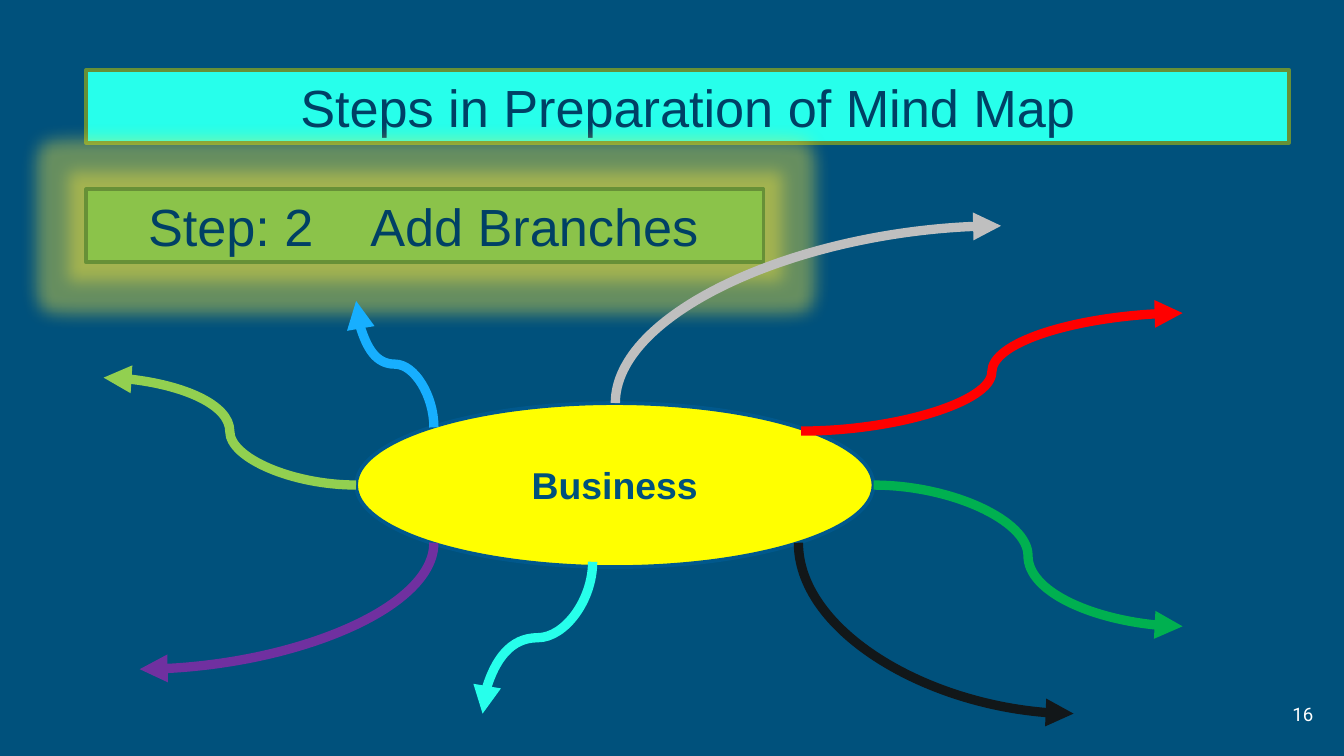
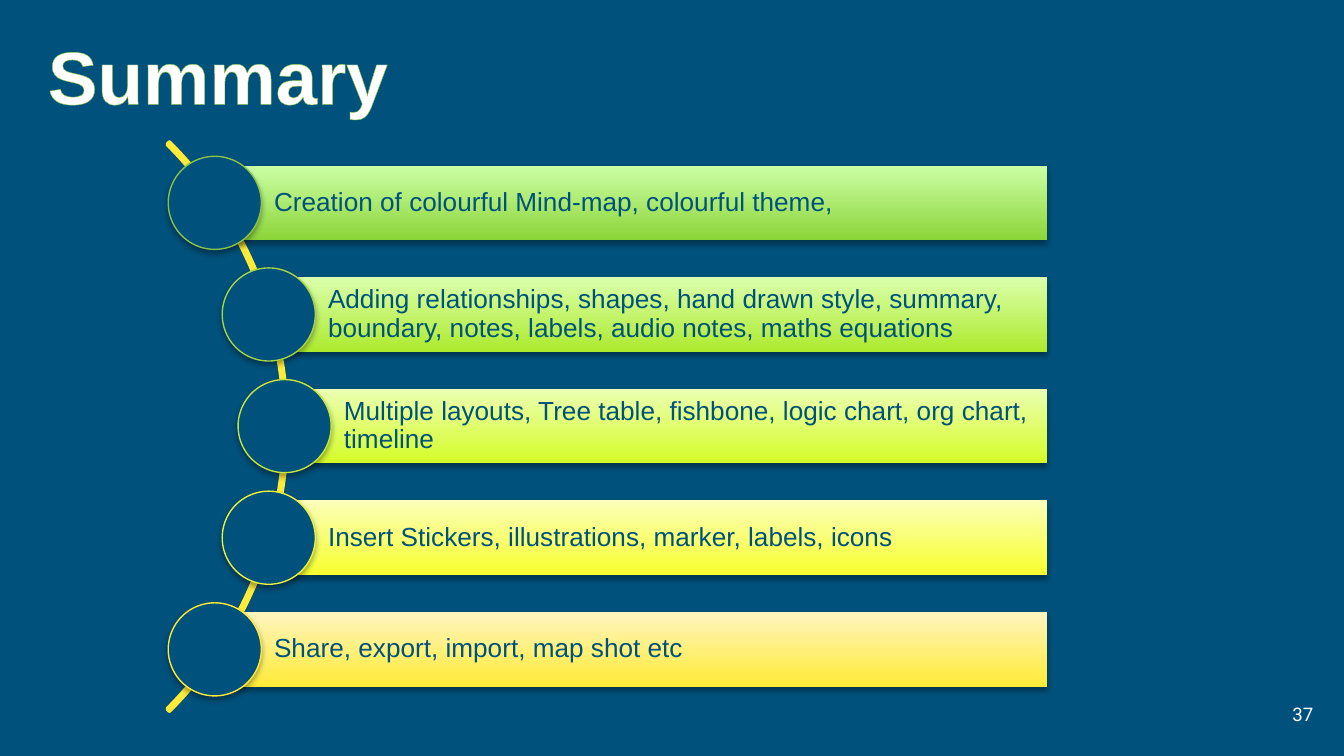
"""Build two mind map slides: the branches step and the summary list."""
from lxml import etree
from pptx import Presentation
from pptx.dml.color import RGBColor
from pptx.enum.shapes import MSO_CONNECTOR, MSO_SHAPE
from pptx.enum.text import MSO_ANCHOR, MSO_AUTO_SIZE, PP_ALIGN
from pptx.oxml import parse_xml
from pptx.oxml.ns import nsdecls, qn
from pptx.util import Cm, Pt

BLUE = RGBColor(0x00, 0x51, 0x7C)
NAVY = RGBColor(0x00, 0x40, 0x65)
RIM_BLUE = RGBColor(0x01, 0x58, 0x8C)
WHITE = RGBColor(0xFF, 0xFF, 0xFF)
AQUA = RGBColor(0x27, 0xFF, 0xEB)
GREEN = RGBColor(0x8B, 0xC3, 0x4A)
DARK_GREEN = RGBColor(0x67, 0x90, 0x37)
YELLOW = RGBColor(0xFF, 0xFF, 0x00)
GOLD = RGBColor(0xFF, 0xEB, 0x38)
RED = RGBColor(0xFF, 0x00, 0x00)
EMERALD = RGBColor(0x00, 0xB0, 0x50)
BLACK = RGBColor(0x12, 0x17, 0x19)
GREY = RGBColor(0xBF, 0xBF, 0xBF)
SKY = RGBColor(0x17, 0xAF, 0xFF)
LIME = RGBColor(0x92, 0xD0, 0x50)
PURPLE = RGBColor(0x70, 0x30, 0xA0)

SHADOW = (
    f'<a:outerShdw {nsdecls("a")} blurRad="40000" dist="23000" dir="5400000" rotWithShape="0">'
    '<a:srgbClr val="000000"><a:alpha val="35000"/></a:srgbClr></a:outerShdw>'
)
GLOW = (
    f'<a:glow {nsdecls("a")} rad="228600">'
    f'<a:srgbClr val="{GOLD}"><a:alpha val="40000"/></a:srgbClr></a:glow>'
)


def add_box(slide, kind, box, fill=None, line=None, width=2, effect=None):
    shape = slide.shapes.add_shape(kind, *[Cm(length) for length in box])
    shape.shadow.inherit = False
    if effect:
        shape._element.spPr.find(qn("a:effectLst")).append(parse_xml(effect))
    if fill is None:
        shape.fill.background()
    else:
        shape.fill.solid()
        shape.fill.fore_color.rgb = fill
    if line is None:
        shape.line.fill.background()
    else:
        shape.line.color.rgb = line
        shape.line.width = Pt(width)
    return shape


def write(shape, text, size, color, align=PP_ALIGN.CENTER, bold=False, font="Arial"):
    frame = shape.text_frame
    frame.text = text
    frame.vertical_anchor = MSO_ANCHOR.MIDDLE
    paragraph = frame.paragraphs[0]
    paragraph.alignment = align
    run_font = paragraph.runs[0].font
    run_font.name = font
    run_font.size = Pt(size)
    run_font.bold = bold
    run_font.color.rgb = color
    return paragraph


presentation = Presentation()
presentation.slide_width = Cm(25.4)
presentation.slide_height = Cm(14.29)

slides = []
for number in ("16", "37"):
    slide = presentation.slides.add_slide(presentation.slide_layouts[6])
    slide.background.fill.solid()
    slide.background.fill.fore_color.rgb = BLUE
    number_box = slide.shapes.add_textbox(Cm(23.55), Cm(12.95), Cm(1.52), Cm(1.09))
    frame = number_box.text_frame
    frame.word_wrap = True
    frame.margin_left = frame.margin_right = Cm(0.25)
    frame.margin_top = frame.margin_bottom = Cm(0.25)
    write(number_box, number, 10, WHITE, PP_ALIGN.RIGHT, font="Roboto")
    slides.append(slide)
branches_slide, summary_slide = slides

heading = add_box(branches_slide, MSO_SHAPE.RECTANGLE, (1.63, 1.32, 22.73, 1.38), AQUA, DARK_GREEN)
write(heading, "Steps in Preparation of Mind Map", 28, NAVY)

step = add_box(
    branches_slide, MSO_SHAPE.RECTANGLE, (1.63, 3.58, 12.8, 1.38), GREEN, DARK_GREEN, effect=GLOW
)
step_paragraph = write(step, "Step: 2\tAdd Branches", 28, NAVY, PP_ALIGN.LEFT)
step.text_frame.margin_left = Cm(1.17)
tab_list = etree.SubElement(step_paragraph._p.get_or_add_pPr(), qn("a:tabLst"))
etree.SubElement(tab_list, qn("a:tab"), pos=str(Cm(4.2)), algn="l")

topic = add_box(branches_slide, MSO_SHAPE.OVAL, (6.73, 7.62, 9.78, 3.1), YELLOW, RIM_BLUE)
write(topic, "Business", 20, BLUE, bold=True)

branches = [
    (RED, 15.14, 8.15, 22.35, 5.92, False, "curvedConnector3"),
    (EMERALD, 16.51, 9.17, 22.35, 11.84, False, "curvedConnector3"),
    (BLACK, 15.09, 10.26, 20.29, 13.49, True, "curvedConnector2"),
    (GREY, 11.63, 7.62, 18.92, 4.27, True, "curvedConnector2"),
    (SKY, 8.2, 8.08, 6.73, 5.69, True, "curvedConnector3"),
    (LIME, 6.73, 9.17, 1.96, 7.14, False, "curvedConnector3"),
    (PURPLE, 8.2, 10.26, 2.64, 12.65, True, "curvedConnector2"),
    (AQUA, 11.2, 10.62, 9.12, 13.49, True, "curvedConnector3"),
]
for color, start_x, start_y, end_x, end_y, leaves_vertically, curve in branches:
    center_x, center_y = (start_x + end_x) / 2, (start_y + end_y) / 2
    half_x, half_y = (end_x - start_x) / 2, (end_y - start_y) / 2
    turn = 0
    if leaves_vertically:
        turn = 1 if half_x * half_y < 0 else -1
        half_x, half_y = turn * half_y, -turn * half_x
    branch = branches_slide.shapes.add_connector(
        MSO_CONNECTOR.CURVE,
        Cm(center_x - half_x), Cm(center_y - half_y),
        Cm(center_x + half_x), Cm(center_y + half_y),
    )
    branch.line.color.rgb = color
    branch.line.width = Pt(5)
    properties = branch._element.spPr
    properties.find(qn("a:xfrm")).set("rot", str(turn * 90 % 360 * 60000))
    properties.find(qn("a:prstGeom")).set("prst", curve)
    etree.SubElement(properties.find(qn("a:ln")), qn("a:tailEnd"), type="triangle")
    etree.SubElement(properties, qn("a:effectLst"))

title = summary_slide.shapes.add_textbox(Cm(0.61), Cm(0.43), Cm(7.01), Cm(1.96))
title.text_frame.word_wrap = False
title.text_frame.auto_size = MSO_AUTO_SIZE.SHAPE_TO_FIT_TEXT
title_paragraph = write(title, "Summary", 40, WHITE, bold=True)
outline = parse_xml(
    f'<a:ln {nsdecls("a")} w="10160"><a:solidFill><a:srgbClr val="{GREEN}"/></a:solidFill></a:ln>'
)
title_paragraph.runs[0]._r.get_or_add_rPr().insert(0, outline)

arc = add_box(summary_slide, MSO_SHAPE.BLOCK_ARC, (-9.78, 0.46, 15.21, 15.21), line=GOLD)
for index, value in enumerate((189, 27, 0.004)):
    arc.adjustments[index] = value

BAR_RIGHT, BAR_TOP, BAR_HEIGHT, BAR_PITCH = 19.79, 3.13, 1.41, 2.11
CIRCLE = 1.76
points = [
    (4.06, "8CD538", "CBFFA6", "8BC34A", "Creation of colourful Mind-map, colourful theme,"),
    (5.08, "ADEA2E", "DBFFAC", "A5D444",
     "Adding relationships, shapes, hand drawn style, summary, boundary, notes, labels, "
     "audio notes, maths equations"),
    (5.38, "D5FC26", "EBFFB3", "C6E43E",
     "Multiple layouts, Tree table, fishbone, logic chart, org chart, timeline"),
    (5.08, "F7FF2E", "FBFFB9", "EBF23B", "Insert Stickers, illustrations, marker, labels, icons"),
    (4.06, "FFEB38", "FFF5BF", "FFEB38", "Share, export, import, map shot etc"),
]
for index, (left, bottom_color, top_color, rim_color, text) in enumerate(points):
    top = BAR_TOP + index * BAR_PITCH
    bar = add_box(
        summary_slide, MSO_SHAPE.RECTANGLE, (left, top, BAR_RIGHT - left, BAR_HEIGHT), effect=SHADOW
    )
    bar.fill.gradient()
    bar.fill.gradient_angle = 90
    for stop, color in zip(bar.fill.gradient_stops, (bottom_color, top_color)):
        stop.color.rgb = RGBColor.from_string(color)
    frame = bar.text_frame
    frame.margin_left = Cm(1.12)
    frame.margin_right = frame.margin_top = frame.margin_bottom = Cm(0.1)
    write(bar, text, 14, BLUE, PP_ALIGN.LEFT).line_spacing = 0.9
    circle_top = top - (CIRCLE - BAR_HEIGHT) / 2
    add_box(
        summary_slide, MSO_SHAPE.OVAL, (left - CIRCLE / 2, circle_top, CIRCLE, CIRCLE),
        BLUE, RGBColor.from_string(rim_color), 0.75, SHADOW,
    )

presentation.save("out.pptx")
